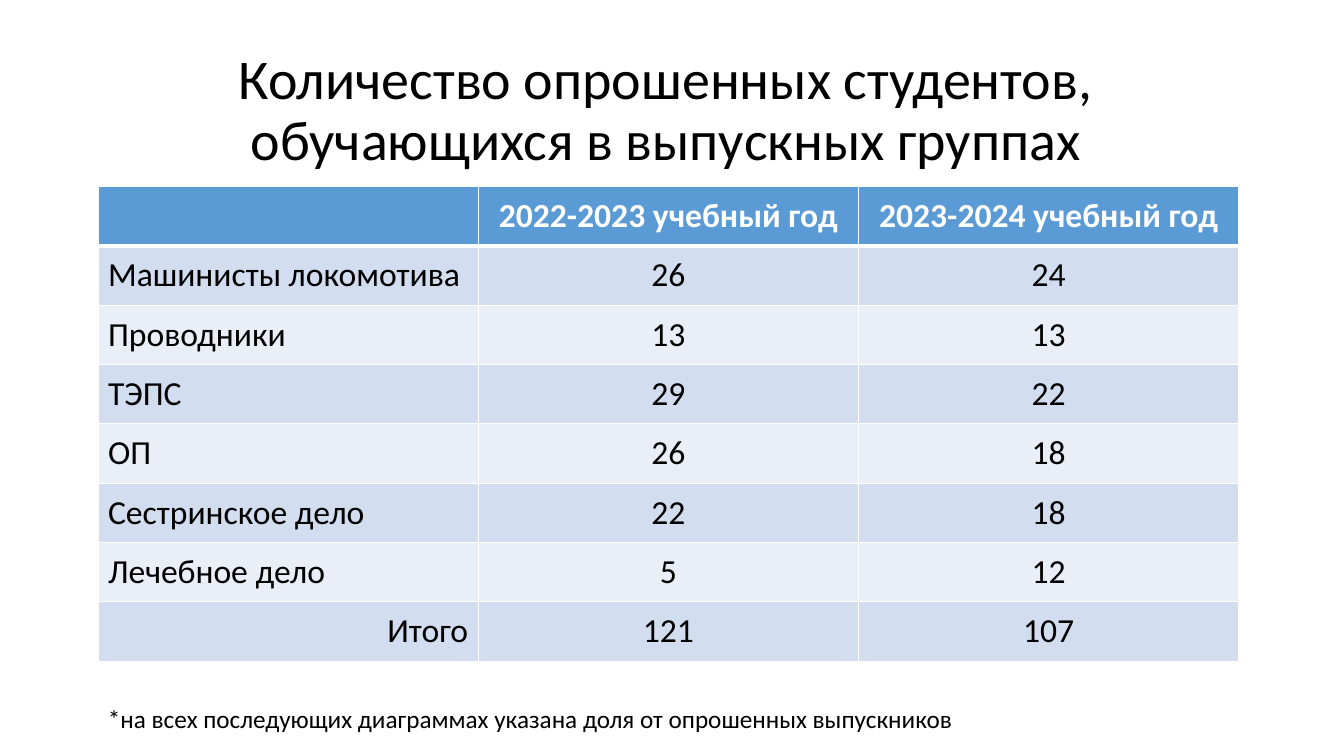
from lxml.etree import SubElement
from pptx import Presentation
from pptx.dml.color import RGBColor
from pptx.enum.text import MSO_ANCHOR, MSO_AUTO_SIZE, PP_ALIGN
from pptx.oxml.ns import qn
from pptx.util import Pt

FONT = "Calibri"
BLACK, WHITE = "000000", "FFFFFF"
HEADER_FILL = "5B9BD5"
BAND_FILLS = ("D2DEEF", "EAEFF7")
LEFT = 70

YEARS = ("2022-2023 учебный год", "2023-2024 учебный год")
GROUPS = (
    ("Машинисты локомотива", 26, 24),
    ("Проводники", 13, 13),
    ("ТЭПС", 29, 22),
    ("ОП", 26, 18),
    ("Сестринское дело", 22, 18),
    ("Лечебное дело", 5, 12),
)


def color(hex_value):
    return RGBColor.from_string(hex_value)


def style_paragraph(paragraph, size, hex_value=BLACK, align=PP_ALIGN.LEFT, bold=False):
    paragraph.alignment = align
    paragraph.font.name = FONT
    paragraph.font.size = Pt(size)
    paragraph.font.bold = bold
    paragraph.font.color.rgb = color(hex_value)


def set_borders(cell, top=1, bottom=1):
    properties = cell._tc.get_or_add_tcPr()
    widths = {"a:lnL": 1, "a:lnR": 1, "a:lnT": top, "a:lnB": bottom}
    for position, (side, width) in enumerate(widths.items()):
        border = SubElement(properties, qn(side), w=str(Pt(width)))
        fill = SubElement(border, qn("a:solidFill"))
        SubElement(fill, qn("a:srgbClr"), val=WHITE)
        properties.insert(position, border)


def add_heading(slide, left, top, width, height):
    heading = slide.shapes.title
    heading.left, heading.top = Pt(left), Pt(top)
    heading.width, heading.height = Pt(width), Pt(height)
    frame = heading.text_frame
    frame.text = "Количество опрошенных студентов, обучающихся в выпускных группах"
    frame.word_wrap = True
    frame.auto_size = MSO_AUTO_SIZE.NONE
    frame.vertical_anchor = MSO_ANCHOR.BOTTOM
    style_paragraph(frame.paragraphs[0], 40, align=PP_ALIGN.CENTER)
    frame.paragraphs[0].line_spacing = 0.9


def add_survey_table(slide, left, top, width, height):
    totals = [sum(counts) for counts in list(zip(*GROUPS))[1:]]
    rows = [("", *YEARS), *GROUPS, ("Итого", *totals)]
    last = len(rows) - 1
    survey = slide.shapes.add_table(
        len(rows), len(rows[0]), Pt(left), Pt(top), Pt(width), Pt(height)
    ).table
    for r, row in enumerate(rows):
        is_header = r == 0
        for c, value in enumerate(row):
            cell = survey.cell(r, c)
            cell.text = str(value)
            cell.vertical_anchor = MSO_ANCHOR.MIDDLE
            cell.fill.solid()
            cell.fill.fore_color.rgb = color(HEADER_FILL if is_header else BAND_FILLS[(r - 1) % 2])
            set_borders(cell, top=3 if r == 1 else 1, bottom=3 if is_header else 1)
            if c > 0:
                align = PP_ALIGN.CENTER
            else:
                align = PP_ALIGN.RIGHT if r == last else PP_ALIGN.LEFT
            style_paragraph(
                cell.text_frame.paragraphs[0], 24, WHITE if is_header else BLACK, align, is_header
            )


def add_footnote(slide, left, top, width, height):
    footnote = slide.shapes.add_textbox(Pt(left), Pt(top), Pt(width), Pt(height))
    frame = footnote.text_frame
    frame.word_wrap = True
    frame.auto_size = MSO_AUTO_SIZE.SHAPE_TO_FIT_TEXT
    frame.text = "*на всех последующих диаграммах указана доля от опрошенных выпускников"
    style_paragraph(frame.paragraphs[0], 18)


def main():
    presentation = Presentation()
    presentation.slide_width, presentation.slide_height = Pt(960), Pt(540)
    slide = presentation.slides.add_slide(presentation.slide_layouts[5])
    add_heading(slide, LEFT, 36.7, 811, 90)
    add_survey_table(slide, LEFT, 133.2, 815, 339.2)
    add_footnote(slide, LEFT, 499, 806, 29)
    presentation.save("out.pptx")


if __name__ == "__main__":
    main()
